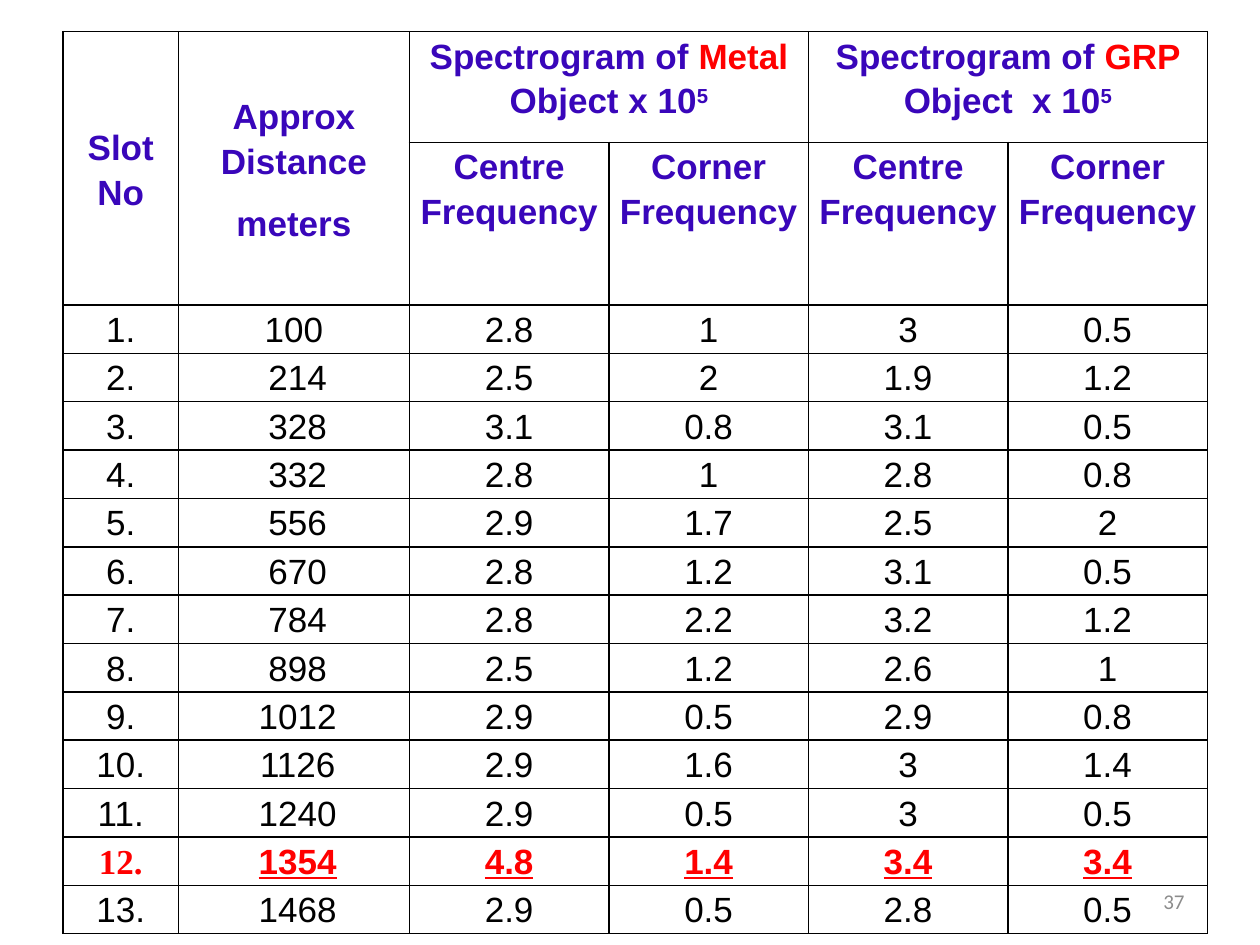
from dataclasses import dataclass

from lxml.etree import SubElement
from pptx import Presentation
from pptx.dml.color import RGBColor
from pptx.enum.text import MSO_ANCHOR, PP_ALIGN
from pptx.oxml.ns import qn
from pptx.util import Pt


@dataclass(frozen=True)
class Theme:
    """Colours, fonts and type sizes of the slide."""
    ink: str = "000000"
    head: str = "3906BA"
    mark: str = "FF0000"
    pale: str = "8C8C8C"
    font: str = "Arial"
    serif: str = "Times New Roman"
    small: str = "Calibri"
    size: float = 20
    note: float = 12


THEME = Theme()
WIDTHS = [66, 132] + [114] * 4
HEIGHTS = [63.4, 87] + [27.35] * 13
ROWS = [
    ("100", "2.8", "1", "3", "0.5"),
    ("214", "2.5", "2", "1.9", "1.2"),
    ("328", "3.1", "0.8", "3.1", "0.5"),
    ("332", "2.8", "1", "2.8", "0.8"),
    ("556", "2.9", "1.7", "2.5", "2"),
    ("670", "2.8", "1.2", "3.1", "0.5"),
    ("784", "2.8", "2.2", "3.2", "1.2"),
    ("898", "2.5", "1.2", "2.6", "1"),
    ("1012", "2.9", "0.5", "2.9", "0.8"),
    ("1126", "2.9", "1.6", "3", "1.4"),
    ("1240", "2.9", "0.5", "3", "0.5"),
    ("1354", "4.8", "1.4", "3.4", "3.4"),
    ("1468", "2.9", "0.5", "2.8", "0.5"),
]
PEAK = 12


def write(para, text, font=THEME.font, size=THEME.size, color=THEME.ink,
          bold=False, line=False, raised=False):
    """Add one formatted run to a paragraph."""
    run = para.add_run()
    run.text = text
    run.font.name = font
    run.font.size = Pt(size)
    run.font.bold = bold
    run.font.underline = line
    run.font.color.rgb = RGBColor.from_string(color)
    if raised:
        run.font._element.set("baseline", "30000")


class Deck:
    """Holds the theme and the current slide."""

    def __init__(self, theme):
        """Start a deck with one blank slide."""
        self.theme = theme
        self.file = Presentation()
        self.file.slide_width, self.file.slide_height = Pt(720), Pt(540)
        self.slide = self.file.slides.add_slide(self.file.slide_layouts[6])

    def label(self, text, left, top, width, height, **style):
        """Add a right-aligned line of text."""
        box = self.slide.shapes.add_textbox(Pt(left), Pt(top), Pt(width), Pt(height))
        frame = box.text_frame
        frame.word_wrap = True
        frame.vertical_anchor = MSO_ANCHOR.MIDDLE
        para = frame.paragraphs[0]
        para.alignment = PP_ALIGN.RIGHT
        write(para, text, **style)

    def grid(self, left, top, widths, heights):
        """Add a plain ruled table."""
        frame = self.slide.shapes.add_table(
            len(heights), len(widths), Pt(left), Pt(top),
            Pt(sum(widths)), Pt(sum(heights)))
        table = frame.table
        table.first_row = table.horz_banding = False
        for col, width in zip(table.columns, widths):
            col.width = Pt(width)
        for row, height in zip(table.rows, heights):
            row.height = Pt(height)
        for cell in table.iter_cells():
            self.rule(cell)
        return table

    def rule(self, cell):
        """Draw the four cell borders and clear the fill."""
        props = cell._tc.get_or_add_tcPr()
        for side in ("lnL", "lnR", "lnT", "lnB"):
            edge = SubElement(props, qn(f"a:{side}"), w=str(Pt(1)))
            fill = SubElement(edge, qn("a:solidFill"))
            SubElement(fill, qn("a:srgbClr"), val=self.theme.ink)
        cell.fill.background()

    def fill(self, cell, *paras, middle=False, after=10, indent=0, **style):
        """Fill a cell with paragraphs, each a list of text and format pairs."""
        cell.margin_left = cell.margin_right = Pt(5)
        cell.margin_top = cell.margin_bottom = 0
        cell.vertical_anchor = MSO_ANCHOR.MIDDLE if middle else MSO_ANCHOR.TOP
        frame = cell.text_frame
        for index, parts in enumerate(paras):
            para = frame.add_paragraph() if index else frame.paragraphs[0]
            para.alignment = PP_ALIGN.CENTER
            para.line_spacing = 1.15
            para.space_after = Pt(after)
            if indent:
                para._p.get_or_add_pPr().set("marL", str(Pt(indent)))
            for text, extra in parts:
                write(para, text, **{**style, **extra})

    def save(self):
        """Save the deck."""
        self.file.save("out.pptx")


def plain(text):
    """Wrap text as a paragraph of one run."""
    return [(text, {})]


def heads(deck, table):
    """Fill the two heading rows."""
    style = {"color": THEME.head, "bold": True}
    red, power = {"color": THEME.mark}, ("5", {"raised": True})
    tops = {
        2: [("Spectrogram of ", {}), ("Metal", red), (" Object x 10", {}), power],
        4: [("Spectrogram of ", {}), ("GRP ", red), ("Object  x 10", {}), power],
    }
    sides = [["Slot No"], ["Approx Distance", "meters"]]
    for col, lines in enumerate(sides):
        table.cell(0, col).merge(table.cell(1, col))
        deck.fill(table.cell(0, col), *map(plain, lines), middle=True, **style)
    for col, parts in tops.items():
        table.cell(0, col).merge(table.cell(0, col + 1))
        deck.fill(table.cell(0, col), parts, **style)
        for step, name in enumerate(("Centre", "Corner")):
            deck.fill(table.cell(1, col + step), plain(f"{name} Frequency"), **style)


def body(deck, table):
    """Fill the numbered rows and mark the peak."""
    for slot, values in enumerate(ROWS, 1):
        peak = slot == PEAK
        style = {"color": THEME.mark if peak else THEME.ink, "bold": peak}
        face = THEME.serif if peak else THEME.font
        deck.fill(table.cell(slot + 1, 0), plain(f"{slot}."), after=0, font=face, **style)
        for col, value in enumerate(values, 1):
            indent = 4.3 if col == 1 and slot > 1 else 0
            deck.fill(table.cell(slot + 1, col), plain(value), indent=indent,
                      line=peak, **style)


def main():
    """Build the slide."""
    deck = Deck(THEME)
    deck.label("37", 516, 500.5, 168, 28.75, font=THEME.small,
               size=THEME.note, color=THEME.pale)
    table = deck.grid(36, 18, WIDTHS, HEIGHTS)
    heads(deck, table)
    body(deck, table)
    deck.save()


if __name__ == "__main__":
    main()
